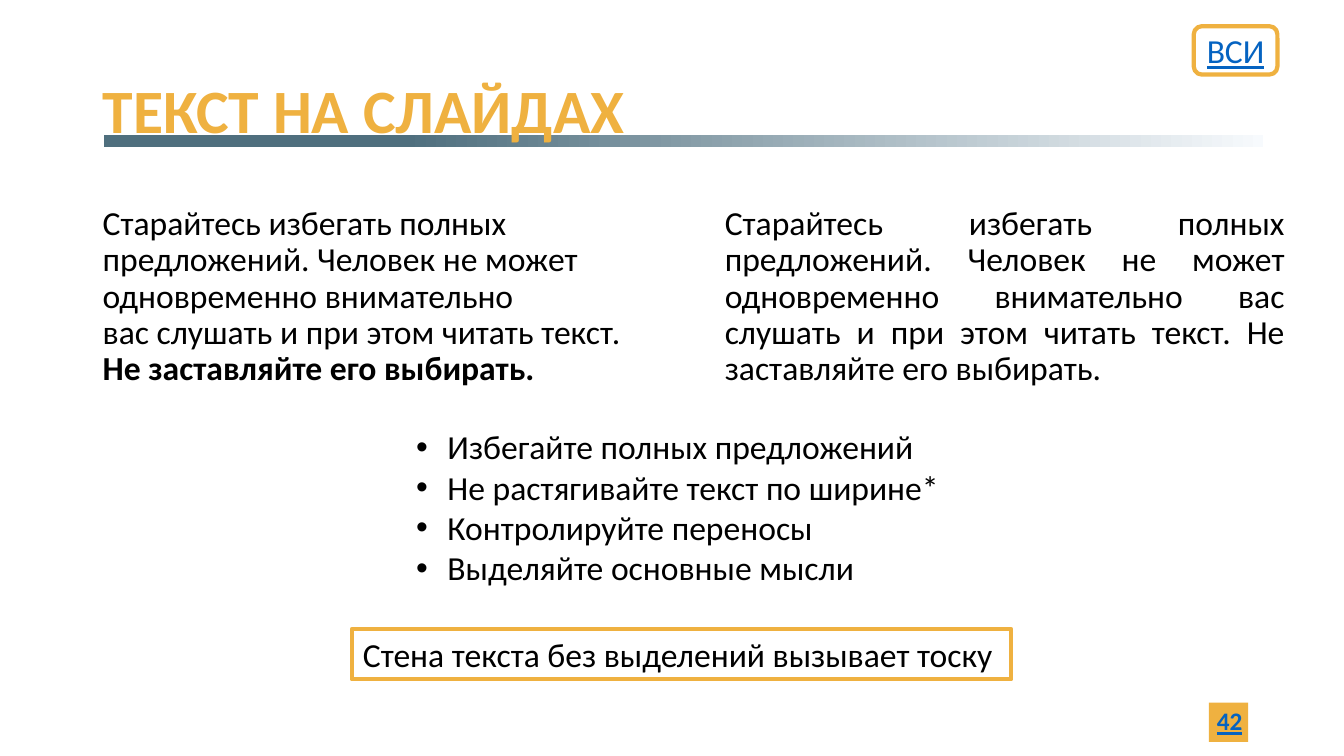
"""Build a slide on how to set text on slides."""
from dataclasses import dataclass
from lxml.etree import SubElement
from pptx import Presentation
from pptx.dml.color import RGBColor as Rgb
from pptx.enum.shapes import MSO_SHAPE as Kind
from pptx.enum.text import MSO_ANCHOR as Anchor, PP_ALIGN as Align
from pptx.oxml.ns import qn
from pptx.util import Inches, Pt


@dataclass(frozen=True)
class Theme:
    font: str = "Calibri"
    gold: Rgb = Rgb(0xEF, 0xB1, 0x40)
    slate: Rgb = Rgb(0x4F, 0x6F, 0x7E)
    pale: Rgb = Rgb(0xF7, 0xFA, 0xFD)
    link: Rgb = Rgb(0x05, 0x63, 0xC1)
    black: Rgb = Rgb(0, 0, 0)
    white: Rgb = Rgb(255, 255, 255)
    title: int = 44
    body: int = 24
    small: int = 18


theme = Theme()
deck = Presentation()
deck.slide_width, deck.slide_height = Inches(13.33), Inches(7.5)
slide = deck.slides.add_slide(deck.slide_layouts[6])
shapes = slide.shapes


def write(shape, text, tail="", size=theme.body, color=theme.black, bold=False,
          under=None, align=Align.LEFT, anchor=Anchor.TOP, space=1.0, bullet=None):
    """Fill a shape with paragraphs (\\n), line breaks (\\v) and a bold tail."""
    frame = shape.text_frame
    frame.word_wrap = True
    frame.vertical_anchor = anchor
    for i, line in enumerate(text.split("\n")):
        para = frame.add_paragraph() if i else frame.paragraphs[0]
        para.alignment, para.line_spacing = align, space
        if bullet:
            props = para._p.get_or_add_pPr()
            props.set("marL", str(Inches(0.31)))
            props.set("indent", str(-Inches(0.31)))
            SubElement(props, qn("a:buFont"), typeface="Arial")
            SubElement(props, qn("a:buChar"), char=bullet)
        parts = [(part, bold) for part in line.split("\v")]
        if tail:
            parts.append((tail, True))
        for j, (part, heavy) in enumerate(parts):
            if j:
                para.add_line_break()
            run = para.add_run()
            run.text = part
            font = run.font
            font.name, font.size, font.bold = theme.font, Pt(size), heavy
            font.underline, font.color.rgb = under, color


def draw(kind, box, fill=None, line=None):
    """Add a flat shape with an optional solid fill and outline."""
    shape = shapes.add_shape(kind, *map(Inches, box))
    shape.shadow.inherit = False
    if fill is not None:
        shape.fill.solid()
        shape.fill.fore_color.rgb = fill
    if line is None:
        shape.line.fill.background()
    else:
        shape.line.color.rgb, shape.line.width = line, Pt(3)
    return shape


rule = draw(Kind.RECTANGLE, (1.03, 1.34, 11.5, 0.12))
rule.fill.gradient()
rule.fill.gradient_angle = 180
for stop, (place, color) in zip(rule.fill.gradient_stops,
                                ((0, theme.pale), (0.74, theme.slate))):
    stop.position, stop.color.rgb = place, color

draw(Kind.RECTANGLE, (11.99, 6.97, 0.39, 0.39), theme.gold)

notes = (
    ((0.92, 0.4, 11.5, 1.45), "ТЕКСТ НА СЛАЙДАХ",
     dict(size=theme.title, color=theme.gold, bold=True, anchor=Anchor.MIDDLE, space=0.9)),
    ((0.92, 2, 5.75, 1.92),
     "Старайтесь избегать полных предложений. Человек не может одновременно "
     "внимательно \vвас слушать и при этом читать текст. ",
     dict(tail="Не заставляйте его выбирать.", space=0.9)),
    ((9.42, 6.95, 3, 0.4), "42",
     dict(size=theme.small, color=theme.link, bold=True, under=True,
          align=Align.RIGHT, anchor=Anchor.MIDDLE)),
    ((7.09, 2, 5.75, 1.92),
     "Старайтесь избегать полных предложений. Человек не может одновременно "
     "внимательно вас слушать и при этом читать текст. Не заставляйте его выбирать.",
     dict(align=Align.JUSTIFY, space=0.9)),
    ((4.03, 4.18, 5.45, 1.72),
     "Избегайте полных предложений\nНе растягивайте текст по ширине*\n"
     "Контролируйте переносы\nВыделяйте основные мысли",
     dict(bullet="•")),
)
for box, text, style in notes:
    write(shapes.add_textbox(*map(Inches, box)), text, **style)

moral = draw(Kind.RECTANGLE, (3.49, 6.24, 6.54, 0.5), theme.white, theme.gold)
write(moral, "Стена текста без выделений вызывает тоску ", align=Align.CENTER)

badge = draw(Kind.ROUNDED_RECTANGLE, (11.84, 0.26, 0.83, 0.48), theme.white, theme.gold)
write(badge, "ВСИ", color=theme.link, under=True, align=Align.CENTER, anchor=Anchor.MIDDLE)

deck.save("out.pptx")
